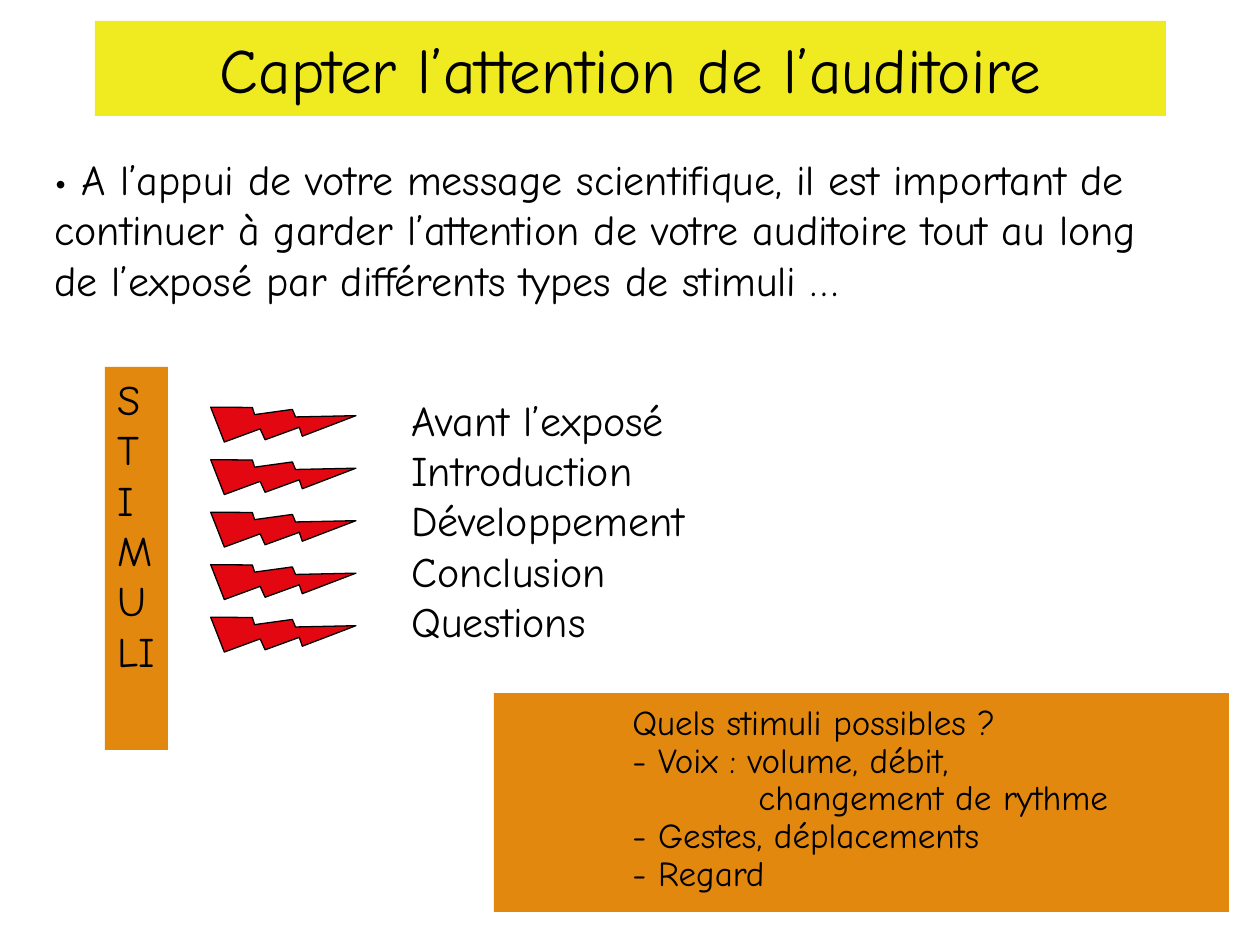
"""Build the slide on keeping the audience's attention with stimuli."""
import pptx
import pptx.dml.color
import pptx.enum.shapes
import pptx.enum.text
import pptx.util

SHAPES = pptx.enum.shapes.MSO_SHAPE
ALIGN = pptx.enum.text.PP_ALIGN
ANCHOR = pptx.enum.text.MSO_ANCHOR

THEME = {
    "font": "Comic Neue", "ink": "000000",
    "yellow": "F0EA20", "orange": "E3880E", "red": "E30712",
    "title": 36, "body": 24, "small": 20, "outline": 0.75,
}

TITLE = [("Capter l’attention de l’auditoire", 0)]
INTRO = [("• A l’appui de votre message scientifique, il est important de continuer "
          "à garder l’attention de votre auditoire tout au long de l’exposé par "
          "différents types de stimuli …", 0)]
STAGES = [(stage, 0) for stage in
          ("Avant l’exposé", "Introduction", "Développement", "Conclusion", "Questions")]
BANNER = [("STIMULI", 0)]
EXAMPLES = [
    ("Quels stimuli possibles ?", 1),
    ("- Voix : volume, débit,", 1),
    ("changement de rythme", 2),
    ("- Gestes, déplacements", 1),
    ("- Regard", 1),
]

BLOCKS = [
    {"lines": TITLE, "at": (95, 21, 1071, 95), "fill": "yellow", "size": "title",
     "frame": {"vertical_anchor": ANCHOR.MIDDLE}, "para": {"alignment": ALIGN.CENTER}},
    {"lines": STAGES, "at": (399, 388, 347, 277)},
    {"lines": BANNER, "at": (105, 367, 63, 383), "fill": "orange"},
    {"lines": EXAMPLES, "at": (494, 693, 735, 219), "fill": "orange", "size": "small",
     "frame": {"margin_top": 12 * 914400 // 126}, "para": {"line_spacing": 0.9}},
    {"lines": INTRO, "at": (42, 147, 1155, 171)},
]
BOLT = {"left": 243, "top": 355, "width": 71, "height": 139, "rotation": 290.6}
BOLT_PITCH = 52.5
INDENT = 126


def px(length):
    return pptx.util.Emu(round(length * 914400 / 126))


def rgb(name):
    return pptx.dml.color.RGBColor.from_string(THEME[name])


def apply(target, values):
    for name, value in values.items():
        setattr(target, name, value)


def paint(shape, fill):
    shape.shadow.inherit = False
    shape.fill.solid()
    shape.fill.fore_color.rgb = rgb(fill)


def add_block(slide, lines, at, fill=None, size="body", frame=None, para=None):
    place = [px(length) for length in at]
    if fill:
        block = slide.shapes.add_shape(SHAPES.RECTANGLE, *place)
        paint(block, fill)
        block.line.fill.background()
    else:
        block = slide.shapes.add_textbox(*place)
    text = block.text_frame
    apply(text, {"word_wrap": True, "vertical_anchor": ANCHOR.TOP, **(frame or {})})
    for index, (words, level) in enumerate(lines):
        paragraph = text.add_paragraph() if index else text.paragraphs[0]
        apply(paragraph, {"text": words, "alignment": ALIGN.LEFT, **(para or {})})
        if level:
            paragraph._p.get_or_add_pPr().set("marL", str(px(level * INDENT)))
        apply(paragraph.font, {"name": THEME["font"], "size": pptx.util.Pt(THEME[size])})
        paragraph.font.color.rgb = rgb("ink")


def add_bolt(slide, index):
    bolt = slide.shapes.add_shape(
        SHAPES.LIGHTNING_BOLT, px(BOLT["left"]), px(BOLT["top"] + index * BOLT_PITCH),
        px(BOLT["width"]), px(BOLT["height"]))
    bolt.rotation = BOLT["rotation"]
    paint(bolt, "red")
    bolt.line.color.rgb = rgb("ink")
    bolt.line.width = pptx.util.Pt(THEME["outline"])


def main():
    deck = pptx.Presentation()
    apply(deck, {"slide_width": px(1260), "slide_height": px(945)})
    slide = deck.slides.add_slide(deck.slide_layouts[6])
    for block in BLOCKS:
        add_block(slide, **block)
    for index in range(len(STAGES)):
        add_bolt(slide, index)
    deck.save("out.pptx")


if __name__ == "__main__":
    main()
